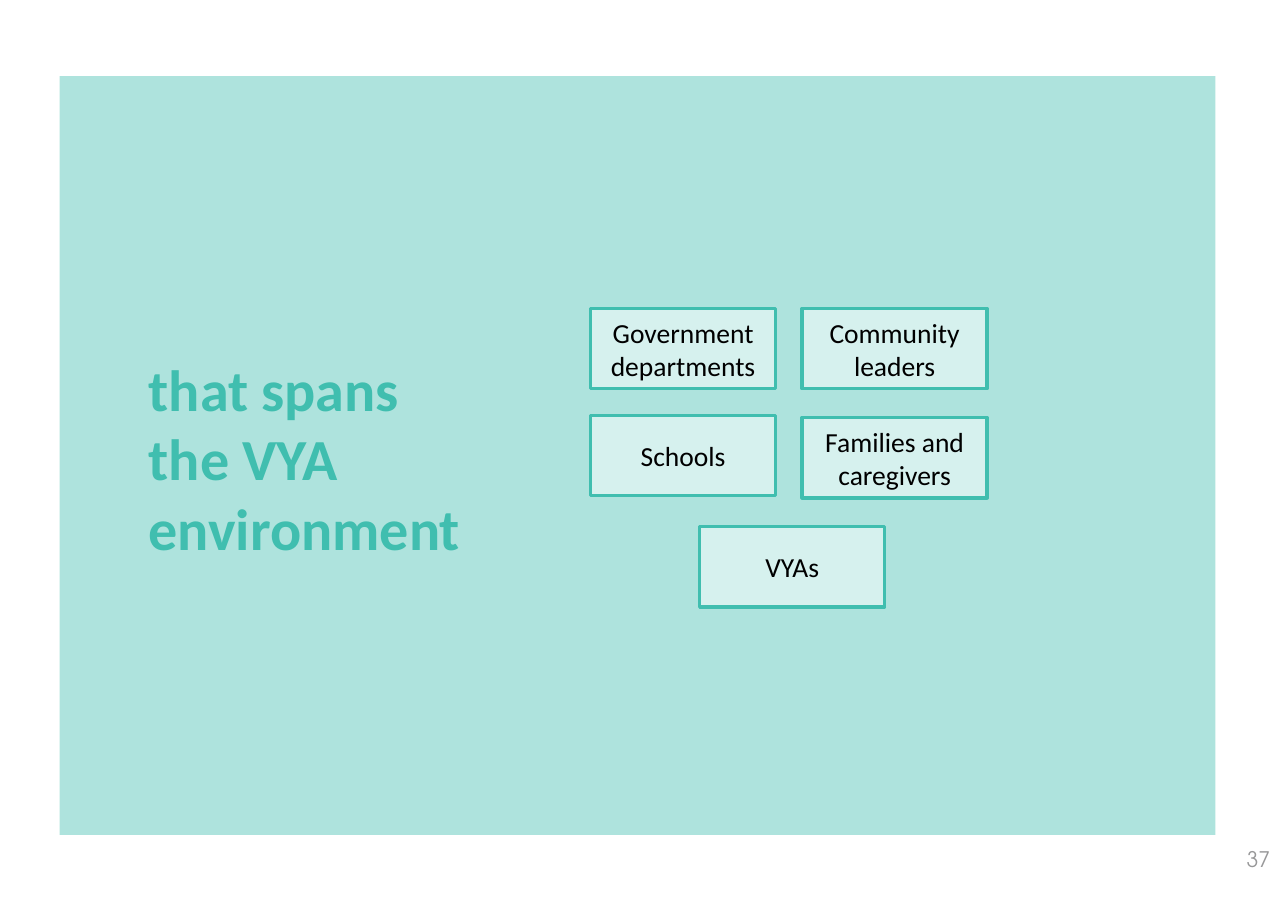
from lxml import etree
from pptx import Presentation
from pptx import util as u
from pptx.dml.color import RGBColor
from pptx.enum import shapes, text
from pptx.oxml.ns import qn

TEAL = "40BEAF"
WHITE = "FFFFFF"
BLACK = "000000"
GREY = "989899"

GROUPS = [
    ("Families and caregivers", 1.92, 0.99),
    ("Schools", 0, 0.97),
    ("Community leaders", 1.92, 0),
    ("Government departments", 0, 0),
    ("VYAs", 0.99, 1.98),
]


def color(value):
    return RGBColor.from_string(value)


def place(shape, box):
    shape.left, shape.top, shape.width, shape.height = map(u.Inches, box)


def add_rectangle(slide, box, fill, opacity):
    shape = slide.shapes.add_shape(
        shapes.MSO_SHAPE.RECTANGLE, *map(u.Inches, box))
    shape.shadow.inherit = False
    shape.fill.solid()
    shape.fill.fore_color.rgb = color(fill)
    solid = shape.element.spPr.find(qn("a:solidFill"))
    alpha = etree.SubElement(solid[0], qn("a:alpha"))
    alpha.set("val", str(opacity * 1000))
    shape.line.fill.background()
    return shape


def write(shape, words, size, fill, font="Calibri", bold=False,
          align=text.PP_ALIGN.LEFT, anchor=text.MSO_ANCHOR.MIDDLE, margin=0.11):
    frame = shape.text_frame
    frame.text = words
    frame.word_wrap = True
    frame.auto_size = text.MSO_AUTO_SIZE.NONE
    frame.vertical_anchor = anchor
    frame.margin_left = frame.margin_right = u.Inches(0.11)
    frame.margin_top = frame.margin_bottom = u.Inches(margin)
    paragraph = frame.paragraphs[0]
    paragraph.alignment = align
    paragraph.font.name = font
    paragraph.font.size = u.Pt(size)
    paragraph.font.bold = bold
    paragraph.font.color.rgb = color(fill)


def add_panel(slide, box):
    add_rectangle(slide, box, TEAL, 42)


def add_groups(slide, box):
    left, top, width, height = box
    for name, across, down in GROUPS:
        shape = add_rectangle(
            slide, (left + across, top + down, width, height), WHITE, 50)
        shape.line.color.rgb = color(TEAL)
        shape.line.width = u.Pt(2.25)
        write(shape, name, 18, BLACK, align=text.PP_ALIGN.CENTER)


def add_title(slide, box):
    title = slide.shapes.title
    place(title, box)
    write(title, "that spans the VYA environment", 38, TEAL, bold=True)
    title.element.getparent().append(title.element)


def add_page_number(slide, box):
    number = slide.shapes.add_textbox(*map(u.Inches, box))
    write(number, "37", 14, GREY, font="TeX Gyre Adventor",
          align=text.PP_ALIGN.RIGHT, anchor=text.MSO_ANCHOR.TOP, margin=0.05)


def main():
    presentation = Presentation()
    presentation.slide_width = u.Inches(11.69)
    presentation.slide_height = u.Inches(8.27)
    slide = presentation.slides.add_slide(presentation.slide_layouts[5])
    add_page_number(slide, (10.94, 7.63, 0.7, 0.63))
    add_panel(slide, (0.54, 0.69, 10.49, 6.89))
    add_groups(slide, (5.36, 2.8, 1.68, 0.73))
    add_title(slide, (1.24, 1.46, 3.13, 5.39))
    presentation.save("out.pptx")


if __name__ == "__main__":
    main()
